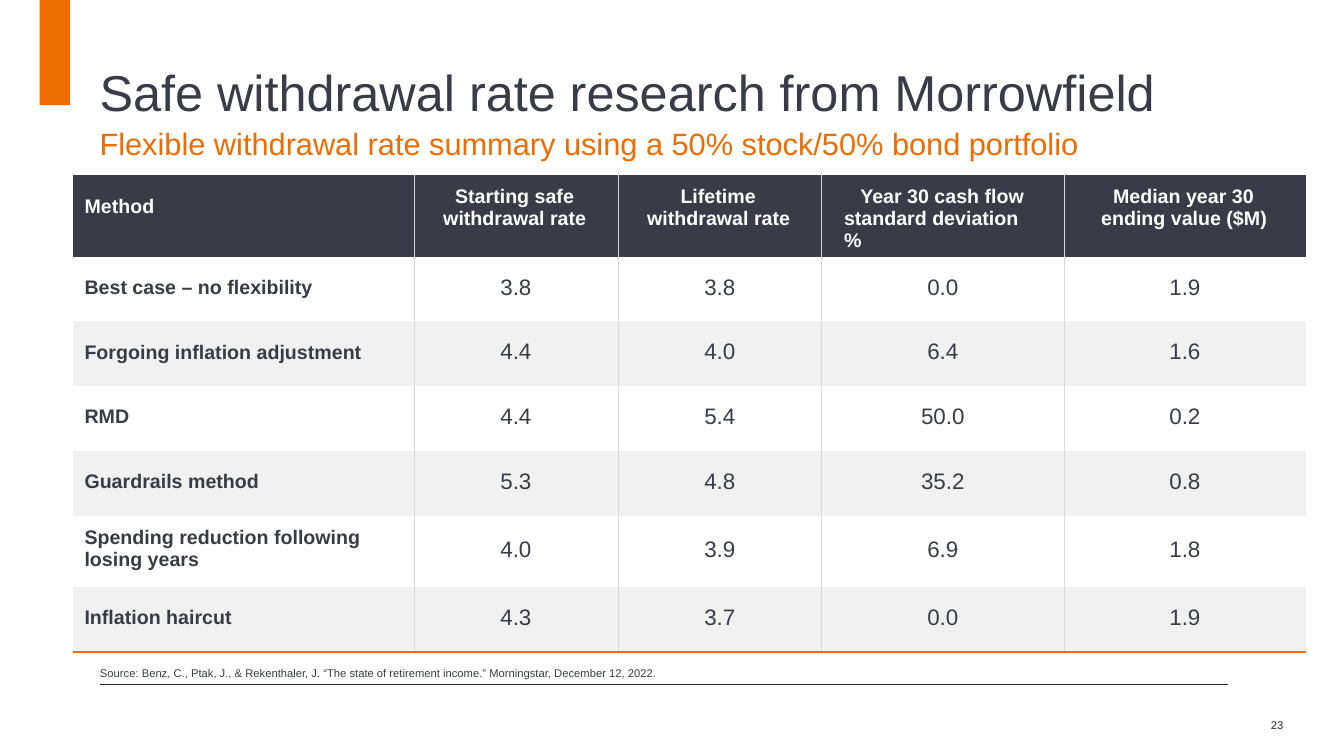
from lxml import etree
from pptx import Presentation, util as u
from pptx.dml.color import RGBColor
from pptx.enum import shapes, text
from pptx.oxml.ns import qn

COLORS = {"slate": "393C46", "orange": "EF6C00", "ink": "242A36", "white": "FFFFFF",
          "band": "F1F1F1", "rule": "D9D9D9"}
Cm, Pt = u.Cm, u.Pt


def add_run(paragraph, words, size, color, bold=False):
    run = paragraph.add_run()
    run.text = words
    run.font.name = "Arial"
    run.font.size = Pt(size)
    run.font.bold = bold
    run.font.color.rgb = RGBColor.from_string(COLORS[color])


def add_border(cell, side, color, width):
    """Draw one cell edge; side is L, R, T or B, in that order of calls."""
    line = etree.SubElement(cell._tc.get_or_add_tcPr(), qn("a:ln" + side), w=str(Pt(width)))
    fill = etree.SubElement(line, qn("a:solidFill"))
    etree.SubElement(fill, qn("a:srgbClr"), val=COLORS[color])


presentation = Presentation()
presentation.slide_width, presentation.slide_height = Cm(33.87), Cm(19.05)
slide = presentation.slides.add_slide(presentation.slide_layouts[6])

# Accent bar and footer rule
bar = slide.shapes.add_shape(shapes.MSO_SHAPE.RECTANGLE, Cm(1), 0, Cm(0.76), Cm(2.65))
bar.shadow.inherit = False
bar.fill.solid()
bar.fill.fore_color.rgb = RGBColor.from_string(COLORS["orange"])
bar.line.fill.background()

footer_rule = slide.shapes.add_connector(
    shapes.MSO_CONNECTOR.STRAIGHT, Cm(2.51), Cm(17.25), Cm(30.94), Cm(17.25))
footer_rule.line.color.rgb = RGBColor.from_string(COLORS["ink"])
footer_rule.line.width = Pt(0.5)
etree.SubElement(footer_rule._element.spPr, qn("a:effectLst"))

# Text boxes: left, top, width, height, top inset, paragraphs
text_boxes = [
    (2.51, 1.22, 29.06, 2.67, 0.33, [
        ("Safe withdrawal rate research from Morrowfield", 36, "slate"),
        ("Flexible withdrawal rate summary using a 50% stock/50% bond portfolio", 22, "orange")]),
    (32.03, 18.11, 0.8, 0.4, 0, [("23", 8, "ink")]),
    (2.52, 16.74, 18, 0.42, 0.06, [
        ("Source: Benz, C., Ptak, J., & Rekenthaler, J. “The state of retirement income.” "
         "Morningstar, December 12, 2022.", 8, "slate")]),
]
for left, top, width, height, inset, lines in text_boxes:
    frame = slide.shapes.add_textbox(Cm(left), Cm(top), Cm(width), Cm(height)).text_frame
    frame.word_wrap = True
    frame.margin_left = frame.margin_right = frame.margin_bottom = 0
    frame.margin_top = Cm(inset)
    for index, (words, size, color) in enumerate(lines):
        paragraph = frame.paragraphs[0]
        if index:
            paragraph = frame.add_paragraph()
            paragraph.space_before = Pt(2.2)
        add_run(paragraph, words, size, color)

# Headers: words, left margin, first-line indent, right margin, top margin
headers = [
    ("Method", 0.3, 0, 0, 0.53),
    ("Starting safe withdrawal rate", 0.74, 0.3, 0.2, 0.28),
    ("Lifetime withdrawal rate", 0.74, 0.84, 0.2, 0.28),
    ("Year 30 cash flow standard deviation %", 0.56, 0.41, 0.9, 0.28),
    ("Median year 30 ending value ($M)", 0.94, 0.3, 0.2, 0.28),
]
methods = [
    ("Best case – no flexibility", "3.8", "3.8", "0.0", "1.9"),
    ("Forgoing inflation adjustment", "4.4", "4.0", "6.4", "1.6"),
    ("RMD", "4.4", "5.4", "50.0", "0.2"),
    ("Guardrails method", "5.3", "4.8", "35.2", "0.8"),
    ("Spending reduction following losing years", "4.0", "3.9", "6.9", "1.8"),
    ("Inflation haircut", "4.3", "3.7", "0.0", "1.9"),
]
column_widths = [8.6, 5.14, 5.14, 6.1, 6.1]
row_heights = [2.07, 1.63, 1.63, 1.63, 1.63, 1.8, 1.63]
last_row, last_column = len(methods), len(headers) - 1

table = slide.shapes.add_table(
    len(row_heights), len(column_widths), Cm(1.83), Cm(4.4),
    Cm(sum(column_widths)), Cm(sum(row_heights))).table
table.first_row = table.horz_banding = False
table._tbl.tblPr.find(qn("a:tableStyleId")).text = "{2D5ABB26-0587-4C30-8999-92F81FD0307C}"
for column, width in zip(table.columns, column_widths):
    column.width = Cm(width)
for row, height in zip(table.rows, row_heights):
    row.height = Cm(height)

for r in range(len(row_heights)):
    tall = r == 5
    for c in range(len(column_widths)):
        cell = table.cell(r, c)
        paragraph = cell.text_frame.paragraphs[0]
        left = right = indent = 0
        if r == 0:
            words, left, indent, right, top = headers[c]
            size, color, bold = 14, "white", True
        elif c == 0:
            words, left, right = methods[r - 1][0], 0.3, 0.6
            top = 0.28 if tall else 0.5
            size, color, bold = 14, "slate", True
        else:
            words, top = methods[r - 1][c], 0.54 if tall else 0.46
            size, color, bold = 16, "slate", False
            paragraph.alignment = text.PP_ALIGN.CENTER
        cell.margin_left, cell.margin_right = Cm(left), Cm(right)
        cell.margin_top, cell.margin_bottom = Cm(top), 0
        if indent:
            paragraph._p.get_or_add_pPr().set("indent", str(Cm(indent)))
        add_run(paragraph, words, size, color, bold)

        if c > 0:
            add_border(cell, "L", "rule", 0.5)
        if c < last_column:
            add_border(cell, "R", "rule", 0.5)
        if r == last_row:
            add_border(cell, "B", "orange", 1.5)
        cell.fill.solid()
        shade = "slate" if r == 0 else "white" if r % 2 else "band"
        cell.fill.fore_color.rgb = RGBColor.from_string(COLORS[shade])

presentation.save("out.pptx")
